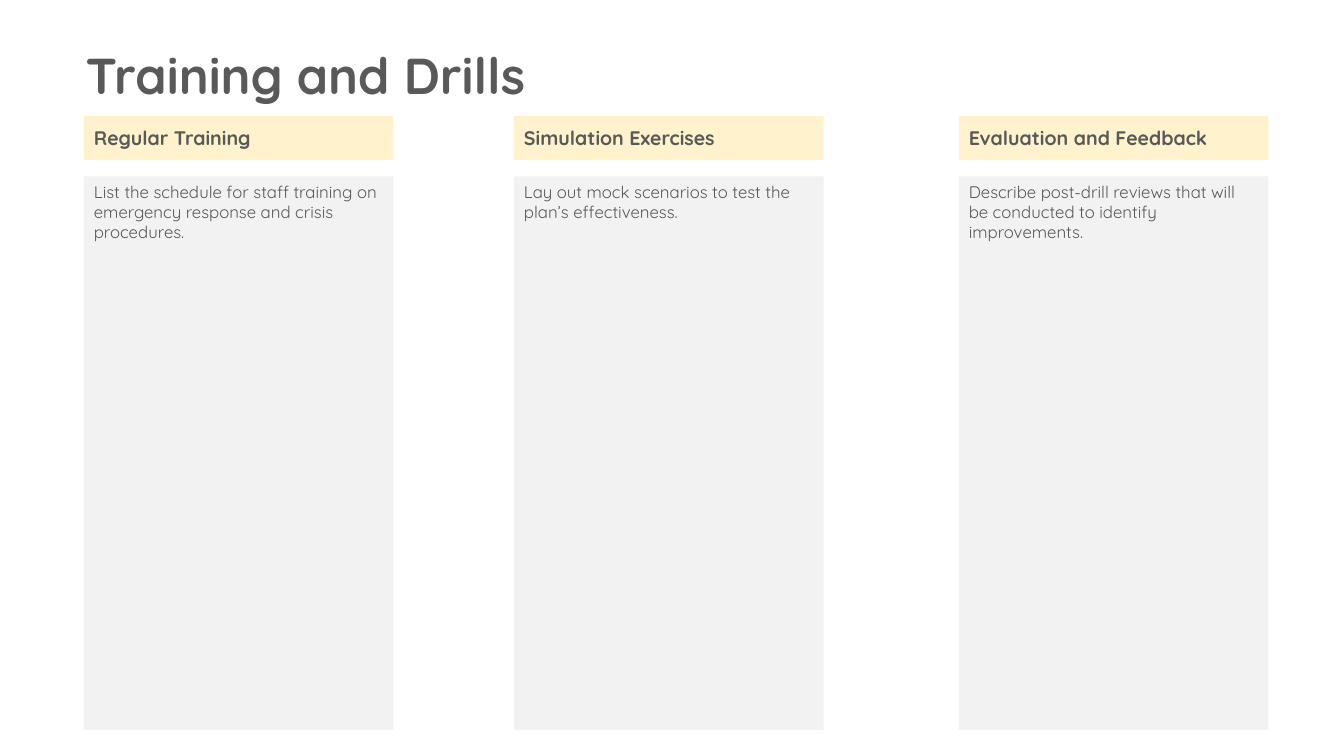
import pptx
import pptx.util
import pptx.dml.color
import pptx.enum.shapes
import pptx.enum.text

ANCHOR = pptx.enum.text.MSO_ANCHOR


def rgb(value):
    return pptx.dml.color.RGBColor.from_string(value)


def write(tf, text, size=12, bold=False, color="595959", font="Quicksand",
          anchor=ANCHOR.TOP):
    tf.word_wrap = True
    tf.auto_size = pptx.enum.text.MSO_AUTO_SIZE.NONE
    tf.vertical_anchor = anchor
    p = tf.paragraphs[0]
    p.alignment = pptx.enum.text.PP_ALIGN.LEFT
    r = p.add_run()
    r.text = text
    r.font.name = font
    r.font.size = pptx.util.Pt(size)
    r.font.bold = bold
    r.font.color.rgb = rgb(color)


class Deck:
    """Builds slides on a grid of 160 columns by 90 rows."""

    header_fill = "FFF2CC"
    panel_fill = "F2F2F2"

    def __init__(self):
        self.prs = pptx.Presentation()
        self.prs.slide_width = pptx.util.Inches(13.33)
        self.prs.slide_height = pptx.util.Inches(7.5)
        self.s = self.prs.slides.add_slide(self.prs.slide_layouts[5])

    def box(self, col, row, cols, rows):
        w, h = self.prs.slide_width / 160, self.prs.slide_height / 90
        return [round(v) for v in (col * w, row * h, cols * w, rows * h)]

    def title(self, text, *cells):
        sp = self.s.shapes.title
        sp.left, sp.top, sp.width, sp.height = self.box(*cells)
        write(sp.text_frame, text, size=36, bold=True)

    def block(self, text, *cells, fill, **style):
        sp = self.s.shapes.add_shape(
            pptx.enum.shapes.MSO_SHAPE.RECTANGLE, *self.box(*cells))
        sp.shadow.inherit = False
        sp.fill.solid()
        sp.fill.fore_color.rgb = rgb(fill)
        sp.line.fill.background()
        write(sp.text_frame, text, **style)

    def column(self, col, heading, body, cols=36.85):
        self.block(heading, col, 13.8, cols, 5.28, fill=self.header_fill,
                   size=14, bold=True, anchor=ANCHOR.MIDDLE)
        self.block(body, col, 21, cols, 65.9, fill=self.panel_fill)


def main():
    deck = Deck()
    deck.title("Training and Drills", 9, 4.68, 67.8, 8.52)
    columns = [
        (10, "Regular Training",
         "List the schedule for staff training on emergency response "
         "and crisis procedures."),
        (61.2, "Simulation Exercises",
         "Lay out mock scenarios to test the plan’s effectiveness."),
        (114.15, "Evaluation and Feedback",
         "Describe post-drill reviews that will be conducted to identify "
         "improvements."),
    ]
    for col, heading, body in columns:
        deck.column(col, heading, body)
    deck.prs.save("out.pptx")


if __name__ == "__main__":
    main()
